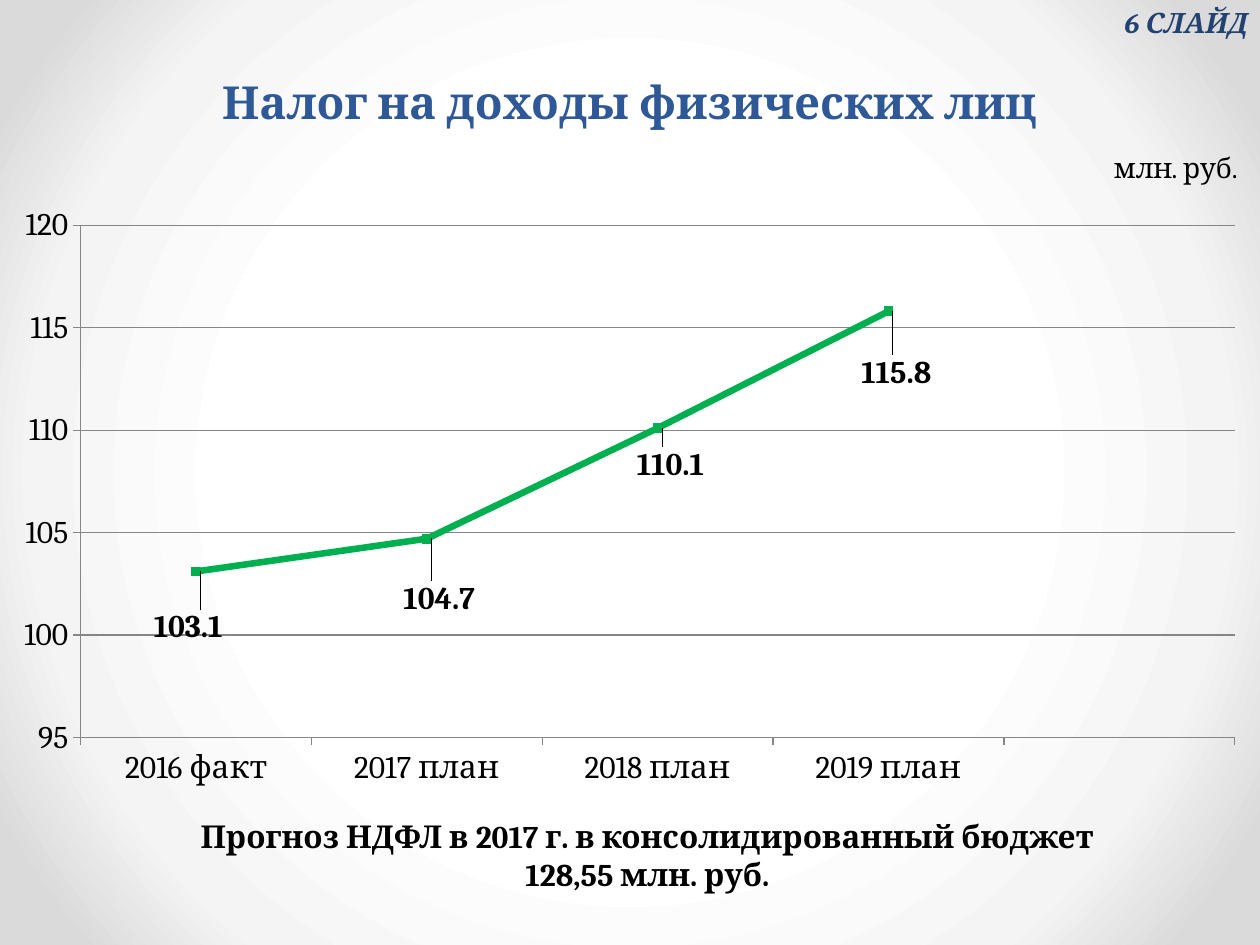
import pptx
import pptx.chart.data
import pptx.dml.color
import pptx.enum.chart
import pptx.enum.text
import pptx.oxml
import pptx.oxml.ns
import pptx.util

SCALE = 914400 / 126  # EMU in one px
THEME = {
    "font": "Cambria",
    "title": "2F5897", "tag": "234271", "text": "000000",
    "line": "00B050", "axis": "868686",
    "title_size": 26, "body_size": 18, "small_size": 16,
    "backdrop": [(0, "FFFFFF"), (50, "FFFFFF"), (76, "F4F4F4"), (92, "DADADA"), (100, "DADADA")],
}
ALIGN = pptx.enum.text.PP_ALIGN
ANCHOR = pptx.enum.text.MSO_ANCHOR
MARK = pptx.enum.chart.XL_TICK_MARK


def style(font, size, color, **extra):
    values = {"name": THEME["font"], "size": pptx.util.Pt(size), **extra}
    for name, value in values.items():
        setattr(font, name, value)
    font.color.rgb = pptx.dml.color.RGBColor.from_string(THEME[color])


def place(parent, index, **parts):
    """Give a chart part a manual layout, as fractions of the chart."""
    for old in parent.findall(pptx.oxml.ns.qn("c:layout")):
        parent.remove(old)
    items = "".join(f'<c:{key} val="{value}"/>' for key, value in parts.items())
    parent.insert(index, pptx.oxml.parse_xml(
        f'<c:layout {pptx.oxml.ns.nsdecls("c")}><c:manualLayout>{items}</c:manualLayout></c:layout>'))


deck = pptx.Presentation()
deck.slide_width, deck.slide_height = (pptx.util.Emu(round(px * SCALE)) for px in (1260, 945))
page = deck.slides.add_slide(deck.slide_layouts[6])

# Radial backdrop
page.background.fill.solid()
solid = page.element.xpath(".//p:bgPr/a:solidFill")[0]
stops = "".join(f'<a:gs pos="{at * 1000}"><a:srgbClr val="{color}"/></a:gs>'
                for at, color in THEME["backdrop"])
solid.getparent().replace(solid, pptx.oxml.parse_xml(
    f'<a:gradFill {pptx.oxml.ns.nsdecls("a")} rotWithShape="1"><a:gsLst>{stops}</a:gsLst>'
    '<a:path path="circle"><a:fillToRect l="50000" t="50000" r="50000" b="50000"/></a:path>'
    '</a:gradFill>'))

# Line chart, with an empty fifth category
data = pptx.chart.data.CategoryChartData(number_format="#,##0.0")
data.categories = ["2016 факт", "2017 план", "2018 план", "2019 план", ""]
data.add_series("НДФЛ", [103.1, 104.7, 110.1, 115.8, None])
CHART_WIDTH, CHART_HEIGHT = 1260, 674
frame = page.shapes.add_chart(
    pptx.enum.chart.XL_CHART_TYPE.LINE_MARKERS,
    *(round(px * SCALE) for px in (0, 125, CHART_WIDTH, CHART_HEIGHT)), data)
chart = frame.chart
chart.has_legend = False
style(chart.font, THEME["body_size"], "text")
place(chart.element.xpath(".//c:plotArea")[0], 0,
      layoutTarget="inner", xMode="edge", yMode="edge", x=0.064, y=0.149, w=0.916, h=0.76)

# Unit as chart title
chart.has_title = True
unit = chart.chart_title.text_frame
unit.text = "млн. руб."
style(unit.paragraphs[0].runs[0].font, THEME["small_size"], "text", bold=False)
place(chart.element.xpath(".//c:title")[0], 1, xMode="edge", yMode="edge", x=0.88, y=0.03)

# Axes
axis_color = pptx.dml.color.RGBColor.from_string(THEME["axis"])
scale_axis = chart.value_axis
for name, value in {"minimum_scale": 95, "maximum_scale": 120, "major_unit": 5,
                    "has_major_gridlines": True}.items():
    setattr(scale_axis, name, value)
scale_axis.tick_labels.number_format = "#,##0"
scale_axis.tick_labels.number_format_is_linked = False
for axis in (chart.category_axis, scale_axis):
    axis.major_tick_mark, axis.minor_tick_mark = MARK.OUTSIDE, MARK.NONE
for part in (chart.category_axis, scale_axis, scale_axis.major_gridlines):
    part.format.line.color.rgb = axis_color
    part.format.line.width = pptx.util.Pt(0.75)

# Series and its markers
plot = chart.plots[0]
plot.vary_by_categories = False
series = plot.series[0]
series.smooth = False
green = pptx.dml.color.RGBColor.from_string(THEME["line"])
series.format.line.color.rgb = green
series.format.line.width = pptx.util.Pt(3.75)
series.marker.style = pptx.enum.chart.XL_MARKER_STYLE.SQUARE
series.marker.size = 5
series.marker.format.fill.solid()
series.marker.format.fill.fore_color.rgb = green
series.marker.format.line.color.rgb = green

# Value labels, each shifted from its place right of the point
shifts = [(-52, 56), (-33, 60), (-30, 37), (-36, 61)]
for index, (right, down) in enumerate(shifts):
    label = series.points[index].data_label
    style(label.font, THEME["body_size"], "text", bold=True)
    label.position = pptx.enum.chart.XL_LABEL_POSITION.RIGHT
    place(chart.element.xpath(f".//c:dLbl[c:idx/@val={index}]")[0], 1,
          x=round(right / CHART_WIDTH, 3), y=round(down / CHART_HEIGHT, 3))

# Title, forecast and slide tag
texts = [
    ("Налог на доходы физических лиц", (63, 0, 1134, 135), "title_size", "title",
     {"bold": True}, {"alignment": ALIGN.CENTER, "line_spacing": pptx.util.Pt(58)},
     {"vertical_anchor": ANCHOR.BOTTOM, "word_wrap": True}),
    ("Прогноз НДФЛ в 2017 г. в консолидированный бюджет\v128,55 млн. руб.",
     (112, 811, 1071, 89), "body_size", "text",
     {"bold": True}, {"alignment": ALIGN.CENTER}, {"word_wrap": True}),
    ("6 СЛАЙД", (1089, -1, 171, 47), "small_size", "tag",
     {"bold": True, "italic": True}, {"alignment": ALIGN.RIGHT}, {"word_wrap": True}),
]
for words, spot, size, color, face, para_format, box_format in texts:
    box = page.shapes.add_textbox(*(round(px * SCALE) for px in spot)).text_frame
    para = box.paragraphs[0]
    para.text = words
    for target, values in ((box, box_format), (para, para_format)):
        for name, value in values.items():
            setattr(target, name, value)
    for span in para.runs:
        style(span.font, THEME[size], color, **face)

deck.save("out.pptx")
